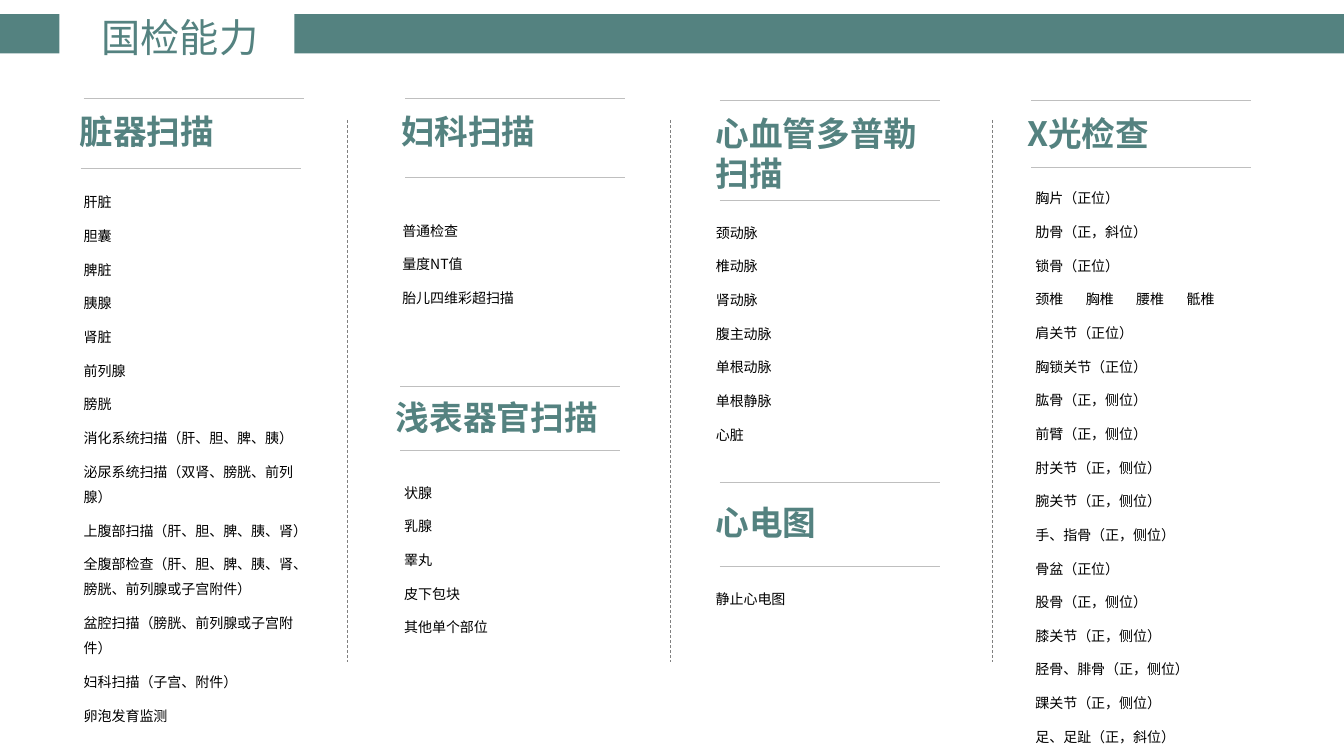
"""Build the slide listing the examinations available in each department."""
from dataclasses import dataclass

from lxml.etree import SubElement
from pptx import Presentation
from pptx.dml.color import RGBColor
from pptx.enum.dml import MSO_LINE
from pptx.enum.shapes import MSO_CONNECTOR, MSO_SHAPE
from pptx.enum.text import MSO_ANCHOR, MSO_AUTO_SIZE, PP_ALIGN
from pptx.oxml.ns import qn
from pptx.shapes.base import BaseShape
from pptx.slide import Slide
from pptx.text.text import TextFrame, _Paragraph
from pptx.util import Inches, Pt

TEAL = RGBColor(0x54, 0x82, 0x80)
BLACK = RGBColor(0x00, 0x00, 0x00)
RULE_GRAY = RGBColor(0xBF, 0xBF, 0xBF)
DIVIDER_GRAY = RGBColor(0x80, 0x80, 0x80)
FONT = "Noto Sans CJK SC"
SLIDE_WIDTH = Inches(13.33)
SLIDE_HEIGHT = Inches(7.5)
RULE_LENGTH = 16.37
HEADING_OFFSET = 1.05
HEADING_WIDTH = 18.6
TAB_STEP = 3
COMPARISON_LAYOUT = 4


@dataclass(frozen=True)
class Section:
    """A ruled heading and its list, in percent of the slide's width and height."""

    heading: str
    rule_left: float
    upper_rule: float
    heading_top: float
    lower_rule: float
    list_left: float
    list_top: float
    list_height: float
    items: tuple[str, ...]
    list_width: float = 17.4
    heading_height: float = 6.67
    lower_shift: float = 0


SECTIONS = (
    Section("脏器扫描", 6.23, 13.07, 14, 22.27, 5.48, 23.87, 70.53, (
        "肝脏", "胆囊", "脾脏", "胰腺", "肾脏", "前列腺", "膀胱",
        "消化系统扫描（肝、胆、脾、胰）",
        "泌尿系统扫描（双肾、膀胱、前列腺）",
        "上腹部扫描（肝、胆、脾、胰、肾）",
        "全腹部检查（肝、胆、脾、胰、肾、膀胱、前列腺或子宫附件）",
        "盆腔扫描（膀胱、前列腺或子宫附件）",
        "妇科扫描（子宫、附件）", "卵泡发育监测",
    ), list_width=18.6, lower_shift=-0.23),
    Section("妇科扫描", 30.16, 13.07, 14, 23.47, 29.18, 27.6, 13.33,
            ("普通检查", "量度NT值", "胎儿四维彩超扫描")),
    Section("心血管多普勒扫描", 53.56, 13.33, 14.27, 26.53, 52.51, 27.87, 31.2,
            ("颈动脉", "椎动脉", "肾动脉", "腹主动脉", "单根动脉", "单根静脉", "心脏"),
            heading_height=12.13),
    Section("X光检查", 76.74, 13.33, 14.27, 22.13, 76.29, 23.33, 76.13, (
        "胸片（正位）", "肋骨（正，斜位）", "锁骨（正位）",
        "\t".join(("颈椎", "胸椎", "腰椎", "骶椎")),
        "肩关节（正位）", "胸锁关节（正位）", "肱骨（正，侧位）", "前臂（正，侧位）",
        "肘关节（正，侧位）", "腕关节（正，侧位）", "手、指骨（正，侧位）", "骨盆（正位）",
        "股骨（正，侧位）", "膝关节（正，侧位）", "胫骨、腓骨（正，侧位）",
        "踝关节（正，侧位）", "足、足趾（正，斜位）",
    )),
    Section("浅表器官扫描", 29.78, 51.07, 51.87, 59.6, 29.33, 62.27, 22.27,
            ("状腺", "乳腺", "睪丸", "皮下包块", "其他单个部位")),
    Section("心电图", 53.56, 63.87, 65.73, 74.93, 52.51, 76.4, 4.27, ("静止心电图",)),
)


def across(percent: float) -> int:
    """Convert a percentage of the slide's width to a length."""
    return round(SLIDE_WIDTH * percent / 100)


def down(percent: float) -> int:
    """Convert a percentage of the slide's height to a length."""
    return round(SLIDE_HEIGHT * percent / 100)


def place(shape: BaseShape, left: float, top: float, width: float, height: float) -> None:
    """Move and resize a shape by shares of the slide."""
    shape.left, shape.top = across(left), down(top)
    shape.width, shape.height = across(width), down(height)


def format_runs(paragraph: _Paragraph, size: float, color: RGBColor, bold: bool = False) -> None:
    """Apply the slide's font to every run of a paragraph."""
    for run in paragraph.runs:
        run.font.size, run.font.bold = Pt(size), bold
        run.font.name = FONT
        run.font.color.rgb = color
        SubElement(run.font._element, qn("a:ea"), typeface=FONT)


def fit_frame(text_frame: TextFrame, wrap: bool, anchor: MSO_ANCHOR) -> None:
    """Set the wrapping, anchor and growth of a text frame."""
    text_frame.word_wrap = wrap
    text_frame.vertical_anchor = anchor
    text_frame.auto_size = MSO_AUTO_SIZE.SHAPE_TO_FIT_TEXT


def draw_bar(slide: Slide, left: float, width: float) -> None:
    """Draw one part of the band beside the title."""
    bar = slide.shapes.add_shape(
        MSO_SHAPE.RECTANGLE, across(left), down(1.87), across(width), down(5.2))
    bar.shadow.inherit = False
    bar.fill.solid()
    bar.fill.fore_color.rgb = TEAL
    bar.line.fill.background()


def draw_line(slide: Slide, start: tuple[float, float], end: tuple[float, float],
              color: RGBColor, dashed: bool = False) -> None:
    """Draw a thin straight line between two points."""
    line = slide.shapes.add_connector(
        MSO_CONNECTOR.STRAIGHT, across(start[0]), down(start[1]), across(end[0]), down(end[1]))
    line.line.color.rgb = color
    line.line.width = Pt(0.5)
    if dashed:
        line.line.dash_style = MSO_LINE.DASH
    SubElement(line._element.spPr, qn("a:effectLst"))


def draw_title(slide: Slide) -> None:
    """Write the slide title."""
    title = slide.shapes.title
    place(title, 6.75, 1.07, 13.28, 7.6)
    title.text_frame.text = "国检能力"
    fit_frame(title.text_frame, False, MSO_ANCHOR.MIDDLE)
    paragraph = title.text_frame.paragraphs[0]
    paragraph.alignment = PP_ALIGN.CENTER
    format_runs(paragraph, 28, TEAL)


def draw_heading(slide: Slide, section: Section) -> None:
    """Write a section heading between its two rules."""
    for left, top in ((section.rule_left, section.upper_rule),
                      (section.rule_left + section.lower_shift, section.lower_rule)):
        draw_line(slide, (left, top), (left + RULE_LENGTH, top), RULE_GRAY)
    heading = slide.shapes.add_textbox(0, 0, 0, 0)
    place(heading, section.rule_left - HEADING_OFFSET, section.heading_top,
          HEADING_WIDTH, section.heading_height)
    heading.text_frame.text = section.heading
    fit_frame(heading.text_frame, True, MSO_ANCHOR.TOP)
    format_runs(heading.text_frame.paragraphs[0], 24, TEAL, bold=True)


def fill_list(shape: BaseShape, section: Section) -> None:
    """Write a section's examinations into a shape."""
    place(shape, section.list_left, section.list_top, section.list_width, section.list_height)
    shape.text_frame.text = "\n".join(section.items)
    fit_frame(shape.text_frame, True, MSO_ANCHOR.TOP)
    for number, paragraph in enumerate(shape.text_frame.paragraphs):
        properties = paragraph._p.get_or_add_pPr()
        properties.set("marL", "0")
        properties.set("indent", "0")
        SubElement(properties, qn("a:buNone"))
        if "\t" in paragraph.text:
            tabs = SubElement(properties, qn("a:tabLst"))
            for stop in range(1, 4):
                SubElement(tabs, qn("a:tab"), pos=str(across(stop * TAB_STEP)), algn="l")
        paragraph.line_spacing = 1.5
        paragraph.space_before = Pt(6 if number else 0)
        format_runs(paragraph, 10, BLACK)


def main() -> None:
    """Build and save the presentation."""
    presentation = Presentation()
    presentation.slide_width, presentation.slide_height = SLIDE_WIDTH, SLIDE_HEIGHT
    slide = presentation.slides.add_slide(presentation.slide_layouts[COMPARISON_LAYOUT])
    bodies = [shape for shape in slide.placeholders if shape.placeholder_format.idx > 0]
    draw_bar(slide, 0, 4.43)
    draw_bar(slide, 21.9, 78.1)
    draw_title(slide)
    for column in range(3):
        left = 25.88 + column * 23.97
        draw_line(slide, (left, 15.87), (left, 87.6), DIVIDER_GRAY, dashed=True)
    for section in SECTIONS:
        draw_heading(slide, section)
        fill_list(bodies.pop(0) if bodies else slide.shapes.add_textbox(0, 0, 0, 0), section)
    presentation.save("out.pptx")


if __name__ == "__main__":
    main()
